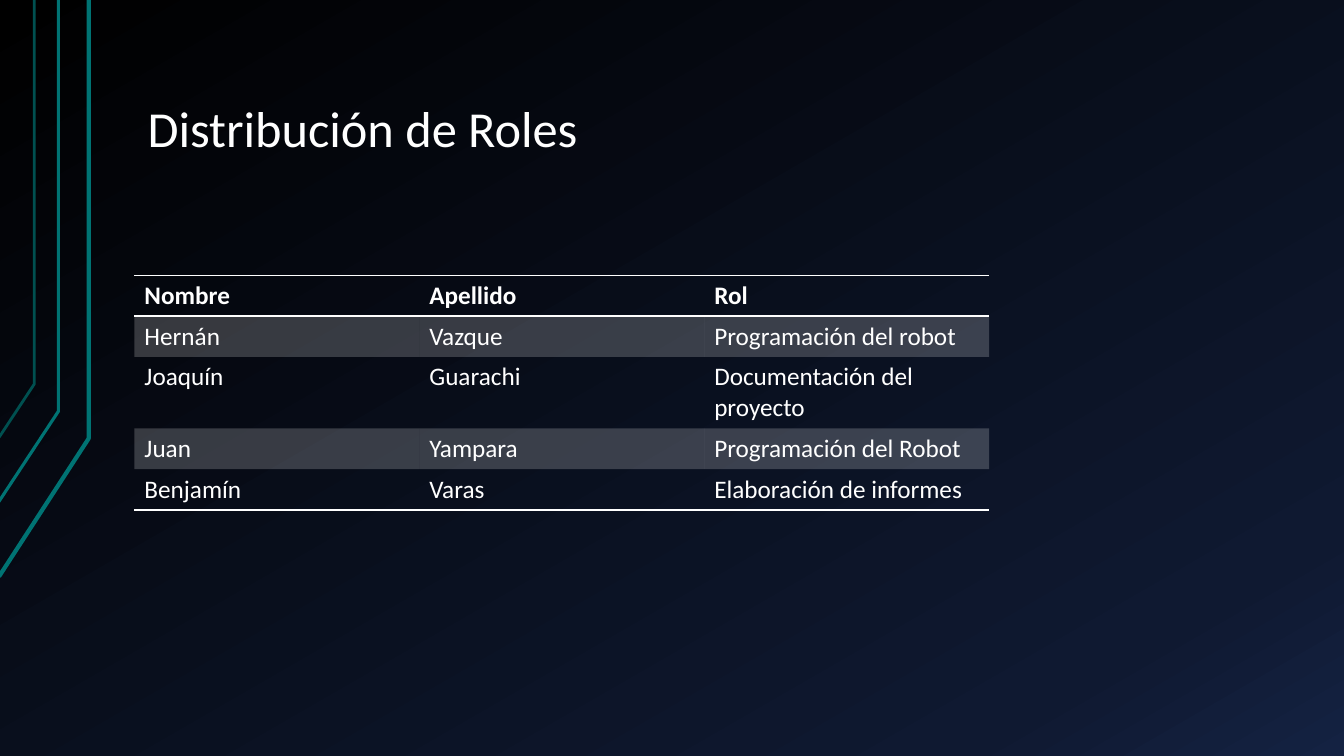
from copy import deepcopy
from dataclasses import dataclass

from lxml.etree import SubElement
from pptx import Presentation
from pptx.dml.color import RGBColor
from pptx.enum.text import MSO_ANCHOR as Anchor
from pptx.oxml import parse_xml
from pptx.oxml.ns import nsdecls, qn
from pptx.util import Emu, Inches, Pt

SLIDE_WIDTH, SLIDE_HEIGHT = Inches(13.33), Inches(7.5)
GRID_COLUMNS, GRID_ROWS = 40, 30
FONT = "Calibri"
COLORS = {
    "text": "FFFFFF",
    "trace": "007373",
    "faded trace": "005050",
    "night": "000000",
    "navy": "0F1931",
    "blue": "142242",
}
GRADIENT = [(0, "night"), (0.85, "navy"), (1, "blue")]
NO_TABLE_STYLE = "{2D5ABB26-0587-4C30-8999-92F81FD0307C}"
BAND_OPACITY = 20


@dataclass
class Trace:
    column: float
    bend_row: float
    exit_column: float
    exit_row: float
    weight: float
    color: str


@dataclass
class TableRow:
    texts: tuple
    height: float = 1.62
    bold: bool = False
    banded: bool = False
    borders: tuple = ()


TRACES = [
    Trace(2.64, 17.4, -0.03, 22.88, 3, "trace"),
    Trace(1.74, 16.32, -0.06, 19.96, 2.25, "trace"),
    Trace(1.02, 15.24, -0.03, 17.36, 2, "faded trace"),
]
TABLE_ROWS = [
    TableRow(("Nombre", "Apellido", "Rol"), bold=True, borders=("lnT", "lnB")),
    TableRow(("Hernán", "Vazque", "Programación del robot"), banded=True),
    TableRow(("Joaquín", "Guarachi", "Documentación del proyecto"), height=2.84),
    TableRow(("Juan", "Yampara", "Programación del Robot"), banded=True),
    TableRow(("Benjamín", "Varas", "Elaboración de informes"), borders=("lnB",)),
]


def across(columns: float) -> Emu:
    return Emu(round(SLIDE_WIDTH * columns / GRID_COLUMNS))


def down(rows: float) -> Emu:
    return Emu(round(SLIDE_HEIGHT * rows / GRID_ROWS))


def color(name: str) -> RGBColor:
    return RGBColor.from_string(COLORS[name])


def write(paragraph, text: str, size: float, bold: bool = False) -> None:
    paragraph.text = text
    font = paragraph.font
    font.name, font.size, font.bold = FONT, Pt(size), bold
    font.color.rgb = color("text")


def paint_background(slide) -> None:
    fill = slide.background.fill
    fill.gradient()
    fill.gradient_angle = 300
    stop_list = next(slide.element.iter(qn("a:gsLst")))
    stop_list.append(deepcopy(stop_list[-1]))
    for stop, (position, name) in zip(fill.gradient_stops, GRADIENT):
        stop.position = position
        stop.color.rgb = color(name)


def draw_trace(slide, trace: Trace) -> None:
    builder = slide.shapes.build_freeform(
        across(trace.exit_column), down(trace.exit_row)
    )
    x = across(trace.column)
    builder.add_line_segments([(x, down(trace.bend_row)), (x, 0)], close=False)
    shape = builder.convert_to_shape()
    shape.shadow.inherit = False
    shape.fill.background()
    shape.line.color.rgb = color(trace.color)
    shape.line.width = Pt(trace.weight)


def draw_title(slide, text: str) -> None:
    shape = slide.shapes.add_textbox(across(4), down(1.2), across(34), down(5.36))
    frame = shape.text_frame
    frame.word_wrap = True
    frame.vertical_anchor = Anchor.BOTTOM
    frame.margin_left = frame.margin_right = Inches(0.13)
    frame.margin_top = frame.margin_bottom = Inches(0.07)
    paragraph = frame.paragraphs[0]
    paragraph.line_spacing = 0.9
    write(paragraph, text, 36)


def format_cell(cell, row: TableRow) -> None:
    properties = cell._tc.get_or_add_tcPr()
    for side in row.borders:
        properties.append(parse_xml(
            f'<a:{side} {nsdecls("a")} w="{Pt(1)}"><a:solidFill>'
            f'<a:srgbClr val="{COLORS["text"]}"/></a:solidFill></a:{side}>'
        ))
    if row.banded:
        cell.fill.solid()
        cell.fill.fore_color.rgb = color("text")
        band = properties.find(qn("a:solidFill"))[0]
        SubElement(band, qn("a:alpha"), val=str(BAND_OPACITY * 1000))
    else:
        cell.fill.background()


def draw_table(slide, rows: list) -> None:
    column_count = len(rows[0].texts)
    column_width = across(8.48)
    height = down(sum(row.height for row in rows))
    frame = slide.shapes.add_table(
        len(rows), column_count, across(4), down(10.92),
        column_width * column_count, height,
    )
    table = frame.table
    table.first_row = table.horz_banding = False
    next(frame.element.iter(qn("a:tableStyleId"))).text = NO_TABLE_STYLE
    for column in table.columns:
        column.width = column_width
    for table_row, row in zip(table.rows, rows):
        table_row.height = down(row.height)
        for cell, text in zip(table_row.cells, row.texts):
            write(cell.text_frame.paragraphs[0], text, 18, row.bold)
            format_cell(cell, row)


def main() -> None:
    presentation = Presentation()
    presentation.slide_width = SLIDE_WIDTH
    presentation.slide_height = SLIDE_HEIGHT
    slide = presentation.slides.add_slide(presentation.slide_layouts[6])
    paint_background(slide)
    for trace in TRACES:
        draw_trace(slide, trace)
    draw_title(slide, "Distribución de Roles")
    draw_table(slide, TABLE_ROWS)
    presentation.save("out.pptx")


if __name__ == "__main__":
    main()
